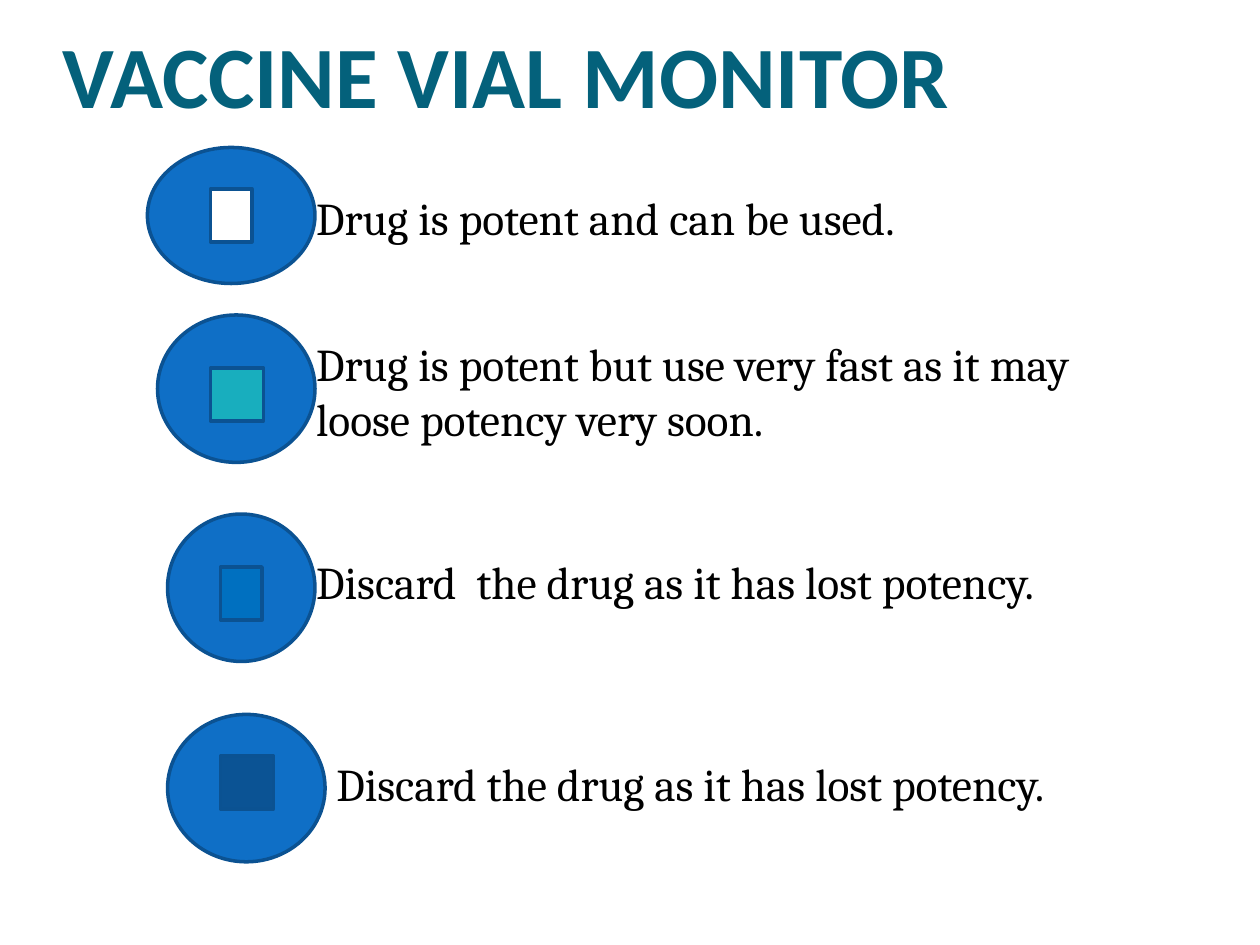
from dataclasses import dataclass

from pptx import Presentation
from pptx.dml.color import RGBColor
from pptx.enum.shapes import MSO_SHAPE as Shape
from pptx.enum.text import MSO_ANCHOR as Anchor
from pptx.util import Inches, Pt


def color(value):
    return RGBColor.from_string(value)


def write(box, text, *, font, size, ink, bold=False):
    span = box.text_frame.paragraphs[0].add_run()
    span.text = text
    span.font.name = font
    span.font.size = Pt(size)
    span.font.bold = bold
    span.font.color.rgb = color(ink)


@dataclass
class MonitorSlide:
    page: object
    heading_font: str = "Calibri"
    body_font: str = "Cambria"
    heading_ink: str = "04617B"
    body_ink: str = "000000"
    outline: str = "0B5292"
    ring: str = "0F6FC6"

    def text_box(self, area, anchor, inset_top=0):
        box = self.page.shapes.add_textbox(*map(Inches, area))
        frame = box.text_frame
        frame.word_wrap = True
        frame.vertical_anchor = anchor
        frame.margin_left = frame.margin_right = frame.margin_bottom = 0
        frame.margin_top = Inches(inset_top)
        return box

    def title(self, text):
        box = self.text_box((0.5, 0.25, 9, 0.75), Anchor.BOTTOM, 0.05)
        write(box, text, font=self.heading_font, size=50,
              ink=self.heading_ink, bold=True)

    def message(self, text, left, top, height):
        box = self.text_box((left, top, 6.6, height), Anchor.TOP)
        write(box, text, font=self.body_font, size=26, ink=self.body_ink)

    def shape(self, kind, area, fill):
        shape = self.page.shapes.add_shape(kind, *map(Inches, area))
        shape.shadow.inherit = False
        shape.fill.solid()
        shape.fill.fore_color.rgb = color(fill)
        shape.line.color.rgb = color(self.outline)
        shape.line.width = Pt(2)

    def vial(self, circle, kind, square, fill):
        self.shape(Shape.OVAL, circle, self.ring)
        self.shape(kind, square, fill)


VIALS = [
    ((1.17, 1.17, 1.33, 1.08), Shape.RECTANGLE, (1.67, 1.5, 0.33, 0.42), "FFFFFF"),
    ((1.25, 2.5, 1.25, 1.17), Shape.ACTION_BUTTON_CUSTOM, (1.67, 2.92, 0.42, 0.42), "18AEBE"),
    ((1.33, 4.08, 1.17, 1.17), Shape.RECTANGLE, (1.75, 4.5, 0.33, 0.42), "0070C0"),
    ((1.33, 5.67, 1.25, 1.17), Shape.RECTANGLE, (1.75, 6, 0.42, 0.42), "0B5394"),
]
MESSAGES = [
    ("Drug is potent and can be used.", 2.51, 1.51, 0.45),
    ("Drug is potent but use very fast as it may loose potency very soon.", 2.51, 2.67, 0.9),
    ("Discard  the drug as it has lost potency.", 2.51, 4.4, 0.45),
    ("Discard the drug as it has lost potency.", 2.67, 6, 0.45),
]


def main():
    deck = Presentation()
    deck.slide_width, deck.slide_height = Inches(10), Inches(7.5)
    slide = MonitorSlide(deck.slides.add_slide(deck.slide_layouts[6]))
    slide.title("VACCINE VIAL MONITOR")
    for message in MESSAGES:
        slide.message(*message)
    for vial in VIALS:
        slide.vial(*vial)
    deck.save("out.pptx")


if __name__ == "__main__":
    main()
